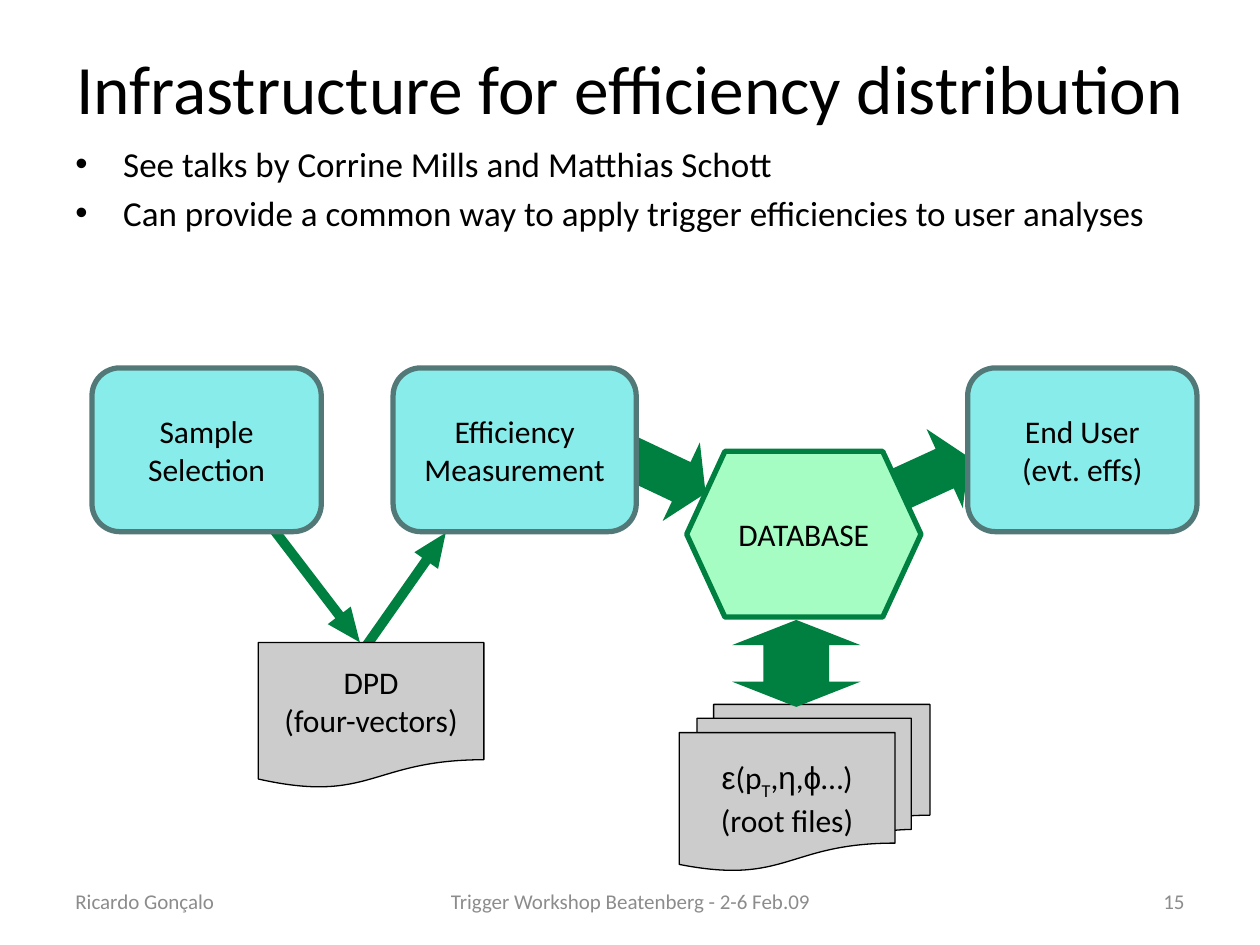
"""Build the slide on infrastructure for efficiency distribution."""
import pptx
import pptx.dml.color
import pptx.enum.shapes
import pptx.enum.text
import pptx.oxml.ns
import pptx.util
from lxml import etree

Inches = pptx.util.Inches
Pt = pptx.util.Pt
qn = pptx.oxml.ns.qn
SHAPE = pptx.enum.shapes.MSO_SHAPE
ALIGN = pptx.enum.text.PP_ALIGN
ANCHOR = pptx.enum.text.MSO_ANCHOR
COLORS = {
    "text": "000000", "footer": "8C8C8C", "arrow": "008040",
    "step": "87ECEA", "step_line": "527978", "database": "A5FDC3",
    "file": "CCCCCC", "file_line": "000000",
}


def rgb(name):
    return pptx.dml.color.RGBColor.from_string(COLORS[name])


def style_paragraph(paragraph, size, color, align, font="Calibri"):
    paragraph.alignment = align
    paragraph.font.size = Pt(size)
    paragraph.font.color.rgb = rgb(color)
    if font:
        paragraph.font.name = font


def write_lines(frame, lines, size, color="text", align=ALIGN.CENTER):
    for index, line in enumerate(lines):
        paragraph = frame.paragraphs[0] if index == 0 else frame.add_paragraph()
        if isinstance(line, str):
            paragraph.add_run().text = line
            style_paragraph(paragraph, size, color, align)
            continue
        style_paragraph(paragraph, size, color, align, font=None)
        for text, font, baseline in line:
            run = paragraph.add_run()
            run.text = text
            run.font.name = font
            if baseline:
                run.font._element.set("baseline", str(baseline))


def add_text(slide, box, lines, size, color="text", align=ALIGN.LEFT, anchor=ANCHOR.MIDDLE):
    frame = slide.shapes.add_textbox(*map(Inches, box)).text_frame
    frame.word_wrap = True
    frame.vertical_anchor = anchor
    write_lines(frame, lines, size, color, align)
    return frame


def add_bullets(slide, box, lines, size):
    frame = add_text(slide, box, lines, size, anchor=ANCHOR.TOP)
    for paragraph in frame.paragraphs:
        paragraph.space_before = Pt(4)
        properties = paragraph._p.get_or_add_pPr()
        properties.set("marL", str(Inches(0.38)))
        properties.set("indent", str(-Inches(0.38)))
        bullet_font = etree.Element(qn("a:buFont"), typeface="Arial")
        properties.find(qn("a:spcBef")).addnext(bullet_font)
        bullet_font.addnext(etree.Element(qn("a:buChar"), char="•"))


def add_filled(slide, kind, box, fill, adjustments=()):
    shape = slide.shapes.add_shape(kind, *map(Inches, box))
    shape.shadow.inherit = False
    shape.fill.solid()
    shape.fill.fore_color.rgb = rgb(fill)
    for index, value in enumerate(adjustments):
        shape.adjustments[index] = value
    return shape


def add_arrow(slide, kind, box, adjustments, rotation=0):
    arrow = add_filled(slide, kind, box, "arrow")
    guides = arrow._element.spPr.find(qn("a:prstGeom")).find(qn("a:avLst"))
    for guide in list(guides):
        guides.remove(guide)
    for number, value in enumerate(adjustments, 1):
        etree.SubElement(guides, qn("a:gd"), name=f"adj{number}",
                         fmla=f"val {round(value * 100000)}")
    arrow.line.fill.background()
    arrow.rotation = rotation


def add_node(slide, kind, box, lines, fill, line, width, adjustments=()):
    node = add_filled(slide, kind, box, fill, adjustments)
    node.line.color.rgb = rgb(line)
    node.line.width = Pt(width)
    node.text_frame.word_wrap = False
    node.text_frame.vertical_anchor = ANCHOR.MIDDLE
    write_lines(node.text_frame, lines, 18)


def add_file(slide, kind, box, lines):
    add_node(slide, kind, box, lines, "file", "file_line", 0.75)


def add_step(slide, left, width, lines):
    add_node(slide, SHAPE.ROUNDED_RECTANGLE, (left, 2.92, width, 1.3), lines,
             "step", "step_line", 3, (0.17,))


def main():
    deck = pptx.Presentation()
    deck.slide_width, deck.slide_height = Inches(10), Inches(7.5)
    slide = deck.slides.add_slide(deck.slide_layouts[6])

    add_text(slide, (0.25, 0.3, 9.5, 0.78),
             ["Infrastructure for efficiency distribution"], 39.6, align=ALIGN.CENTER)
    add_bullets(slide, (0.5, 1.08, 9, 1.17), [
        "See talks by Corrine Mills and Matthias Schott",
        "Can provide a common way to apply trigger efficiencies to user analyses",
    ], 20)

    for left, top, rotation in ((4.8, 3.39, 205.3), (6.89, 3.46, 155.4)):
        add_arrow(slide, SHAPE.LEFT_ARROW, (left, top, 0.84, 0.69), (0.5, 0.31), rotation)
    for left, top, rotation in ((1.94, 4.53, 52.6), (2.64, 4.58, 305.1)):
        add_arrow(slide, SHAPE.RIGHT_ARROW, (left, top, 1.14, 0.23), (0.34, 1.17), rotation)

    efficiency = [
        ("ε", "Arial", 0), ("(p", "Calibri", 0), ("T", "Calibri", -25000),
        (",", "Calibri", 0), ("η", "Arial", 0), (",", "Calibri", 0),
        ("ϕ", "Arial", 0), ("…)", "Calibri", 0),
    ]
    add_file(slide, SHAPE.FLOWCHART_MULTIDOCUMENT, (5.39, 5.59, 1.99, 1.32),
             [efficiency, "(root files)"])
    add_file(slide, SHAPE.FLOWCHART_DOCUMENT, (2.05, 5.1, 1.79, 1.16),
             ["DPD", "(four-vectors)"])

    add_step(slide, 0.73, 1.82, ["Sample", "Selection"])
    add_step(slide, 3.12, 1.93, ["Efficiency", "Measurement"])
    add_step(slide, 7.68, 1.82, ["End User", "(evt. effs)"])
    add_node(slide, SHAPE.HEXAGON, (5.45, 3.58, 1.86, 1.32), ["DATABASE"],
             "database", "arrow", 3, (0.23, 1.15))
    add_arrow(slide, SHAPE.UP_DOWN_ARROW, (5.81, 4.92, 1.02, 0.69), (0.51, 0.29))

    for left, width, text, align in (
        (0.5, 2.33, "Ricardo Gonçalo", ALIGN.LEFT),
        (3.42, 3.17, "Trigger Workshop Beatenberg - 2-6 Feb.09", ALIGN.CENTER),
        (7.17, 2.33, "15", ALIGN.RIGHT),
    ):
        add_text(slide, (left, 6.95, width, 0.4), [text], 12, "footer", align)

    deck.save("out.pptx")


if __name__ == "__main__":
    main()
